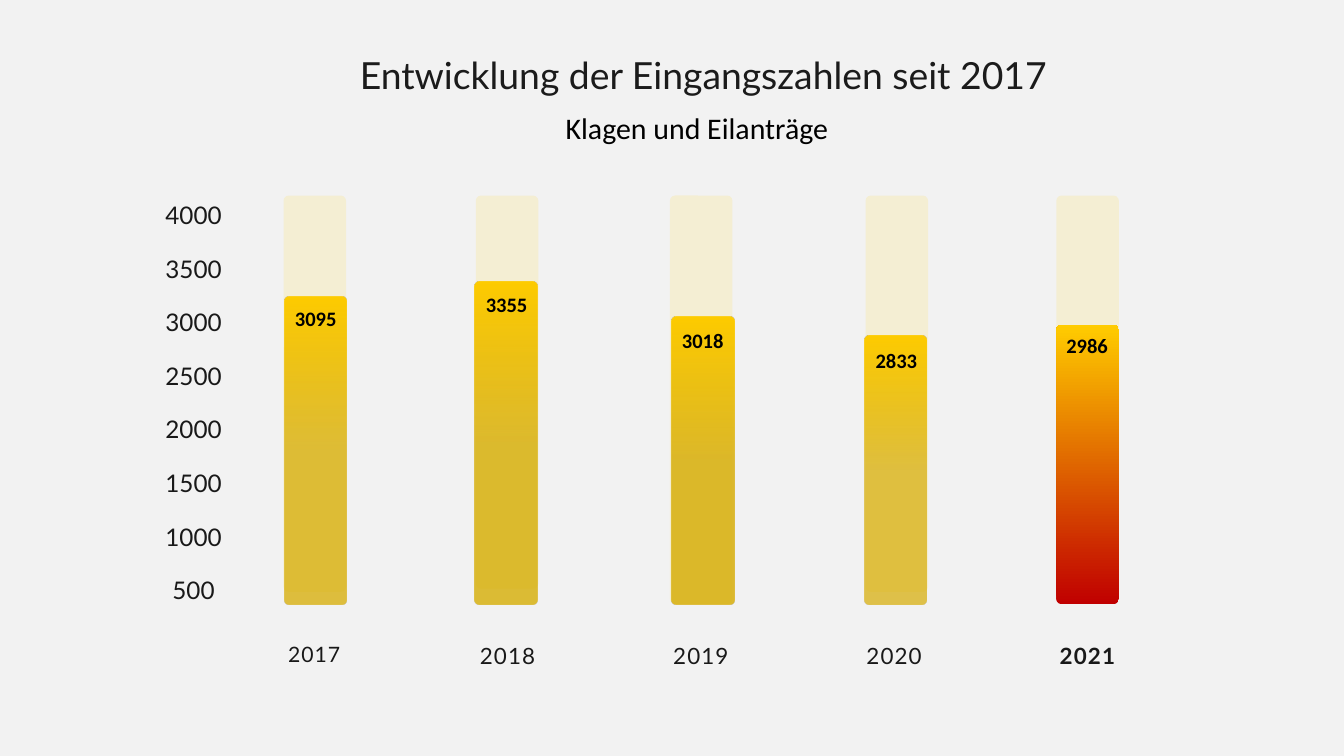
import lxml.etree
import pptx
import pptx.dml.color
import pptx.enum.shapes
import pptx.enum.text
import pptx.oxml.ns
import pptx.util

Pt = pptx.util.Pt
RGBColor = pptx.dml.color.RGBColor
PP_ALIGN = pptx.enum.text.PP_ALIGN

BACKGROUND = RGBColor(0xF2, 0xF2, 0xF2)
TITLE = RGBColor(0x1B, 0x1B, 0x1B)
LABEL = RGBColor(0x19, 0x19, 0x19)
BLACK = RGBColor(0, 0, 0)
TRACK = RGBColor(0xFF, 0xDE, 0x59)
YELLOW = RGBColor(0xFF, 0xCC, 0x00)
GOLD = RGBColor(0xD7, 0xAC, 0x00)
RED = RGBColor(0xC0, 0, 0)

BAR_WIDTH = 67
CORNER = 5.6
AXIS_STEP = 57.4
YEAR_STEP = 207.1

TRACKS = [(128.8, 424.6), (334.8, 421.2), (542.8, 437.6), (752.4, 424.6), (956.8, 419)]
BARS = [
    ("2017", "3095", 129.6, 108, GOLD, 0.5, 74, 133.9, 115.2),
    ("2018", "3355", 334, 92.2, GOLD, 0.5, 78, 338.4, 100.1),
    ("2019", "3018", 545, 129.6, GOLD, 0.5, 80, 548.6, 138.3),
    ("2020", "2833", 750.9, 149.8, GOLD, 0.5, 70, 756, 159.9),
    ("2021", "2986", 956.8, 138.3, RED, 0, 100, 960.4, 143.3),
]


def add_text(s, box, text, size, font, color, bold=False, line=None, spacing=None):
    tf = s.shapes.add_textbox(*(Pt(v) for v in box)).text_frame
    tf.word_wrap = line is not None
    p = tf.paragraphs[0]
    if line is not None:
        tf.margin_left = tf.margin_top = tf.margin_right = tf.margin_bottom = 0
        p.alignment = PP_ALIGN.CENTER
        p.line_spacing = Pt(line)
    r = p.add_run()
    r.text = text
    r.font.size = Pt(size)
    r.font.name = font
    r.font.bold = bold
    r.font.color.rgb = color
    if spacing is not None:
        r.font._element.set("spc", str(round(spacing * 100)))


def add_column(s, left, top, height):
    sp = s.shapes.add_shape(
        pptx.enum.shapes.MSO_SHAPE.ROUNDED_RECTANGLE,
        Pt(left), Pt(top), Pt(BAR_WIDTH), Pt(height),
    )
    sp.adjustments[0] = CORNER / BAR_WIDTH
    sp.shadow.inherit = False
    sp.line.fill.background()
    return sp


def set_alpha(sp, percent):
    color = sp._element.spPr.xpath(".//a:srgbClr")[0]
    alpha = lxml.etree.SubElement(color, pptx.oxml.ns.qn("a:alpha"))
    alpha.set("val", str(percent * 1000))


def add_heading(s, x, y, w):
    add_text(s, (x, y, w, 40.3), "Entwicklung der Eingangszahlen seit 2017", 40, "Lato", TITLE, line=39.6)
    add_text(s, (x + 484.5, y + 49, 304.6, 46), "Klagen und Eilanträge", 32, "Calibri", BLACK)


def add_axis(s, x, y):
    for i, value in enumerate(range(4000, 0, -500)):
        add_text(s, (x, y + i * AXIS_STEP, 64.8, 33.5), str(value), 26, "Lato", LABEL, line=36.4)


def add_bars(s, x, y, h):
    for left, height in TRACKS:
        sp = add_column(s, x + left, y, height)
        sp.fill.solid()
        sp.fill.fore_color.rgb = TRACK
        set_alpha(sp, 20)

    for i, (year, value, left, top, base, start, opacity, label_left, label_top) in enumerate(BARS):
        sp = add_column(s, x + left, y + top, h - top)
        sp.fill.gradient()
        sp.fill.gradient_angle = 90
        for stop, position, color in zip(sp.fill.gradient_stops, (start, 1), (base, YELLOW)):
            stop.position = position
            stop.color.rgb = color
        set_alpha(sp, opacity)
        add_text(s, (x + label_left, y + label_top, 59.8, 33.8), value, 22, "Calibri", BLACK, bold=True)

        size, line, spacing = (22.7, 34, 1.1) if i == 0 else (24, 36, 1.2)
        add_text(
            s, (x + 64.8 + i * YEAR_STEP, y + h + 33.1, 193.7, 31), year, size, "Lato", LABEL,
            bold=i == len(BARS) - 1, line=line, spacing=spacing,
        )


def main():
    prs = pptx.Presentation()
    prs.slide_width = Pt(1440)
    prs.slide_height = Pt(810)
    s = prs.slides.add_slide(prs.slide_layouts[6])
    s.background.fill.solid()
    s.background.fill.fore_color.rgb = BACKGROUND
    add_heading(s, 114.5, 64.8, 1278)
    add_axis(s, 175, 209.5)
    add_bars(s, 175, 209.5, 437.8)
    prs.save("out.pptx")


if __name__ == "__main__":
    main()
